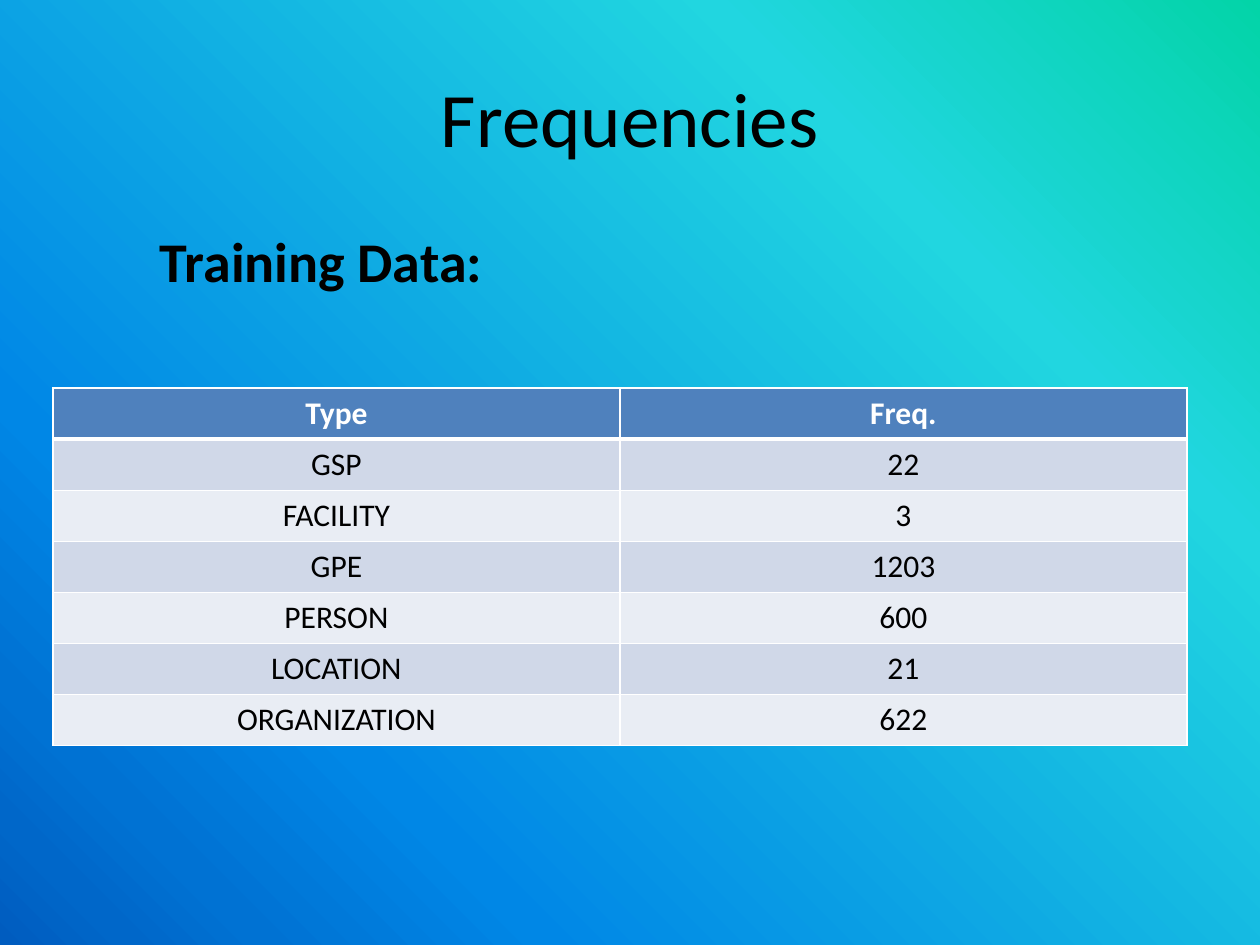
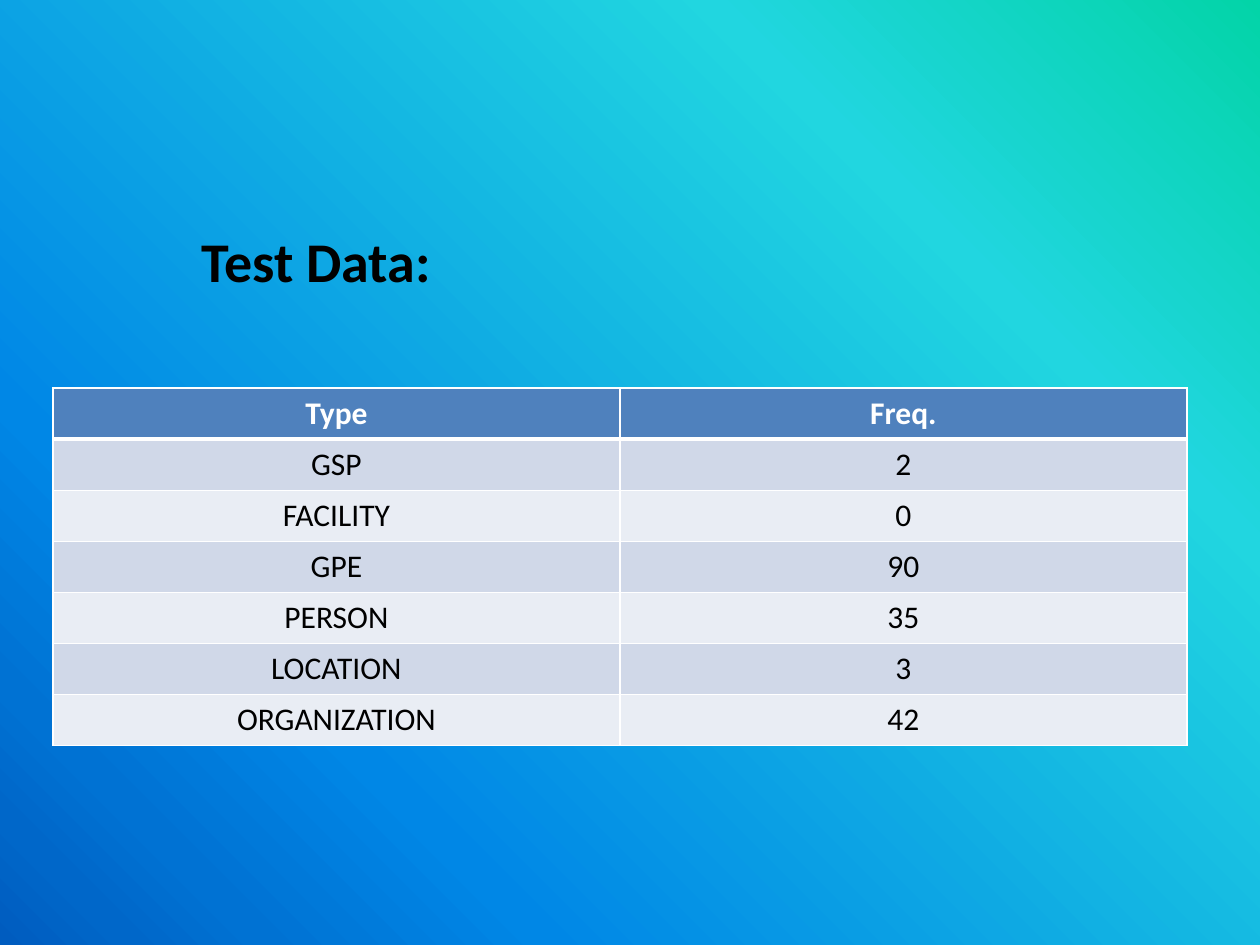
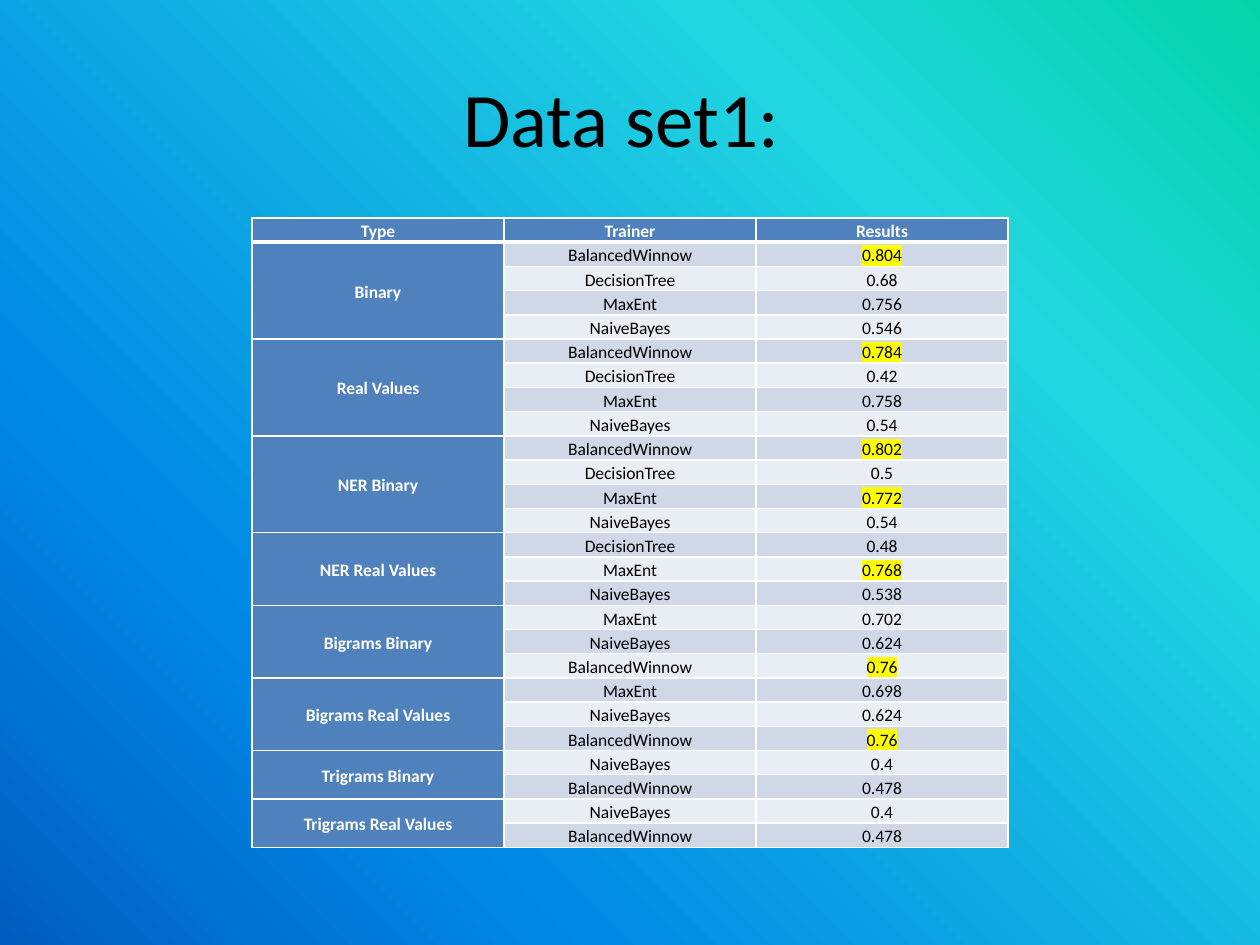
from pptx import Presentation
from pptx.dml.color import RGBColor
from pptx.enum.text import MSO_ANCHOR, MSO_AUTO_SIZE, PP_ALIGN
from pptx.oxml.ns import qn
from pptx.util import Inches, Pt
from lxml import etree

CENTER = PP_ALIGN.CENTER
LEFT = PP_ALIGN.LEFT
TOP = MSO_ANCHOR.TOP
MIDDLE = MSO_ANCHOR.MIDDLE
FIT_SHAPE = MSO_AUTO_SIZE.SHAPE_TO_FIT_TEXT

FONT = "Calibri"
BLACK = RGBColor(0x00, 0x00, 0x00)
WHITE = RGBColor(0xFF, 0xFF, 0xFF)
YELLOW = RGBColor(0xFF, 0xFF, 0x00)
HEADER_BLUE = RGBColor(0x4F, 0x81, 0xBD)
BAND_DARK = RGBColor(0xD0, 0xD8, 0xE8)
BAND_LIGHT = RGBColor(0xE9, 0xED, 0xF4)
BACKGROUND_STOPS = [
    (0, RGBColor(0x03, 0xD4, 0xA8)),
    (25, RGBColor(0x21, 0xD6, 0xE0)),
    (75, RGBColor(0x00, 0x87, 0xE6)),
    (88, RGBColor(0x00, 0x72, 0xD3)),
    (94, RGBColor(0x00, 0x67, 0xC9)),
    (100, RGBColor(0x00, 0x5C, 0xBF)),
]

ENTITY_TYPES = ["GSP", "FACILITY", "GPE", "PERSON", "LOCATION", "ORGANIZATION"]
TRAINING_COUNTS = [22, 3, 1203, 600, 21, 622]
TEST_COUNTS = [2, 0, 90, 35, 3, 42]

WINNOW, TREE, MAXENT, BAYES = "BalancedWinnow", "DecisionTree", "MaxEnt", "NaiveBayes"
ALL_TRAINERS = [WINNOW, TREE, MAXENT, BAYES]
BIGRAM_TRAINERS = [MAXENT, BAYES, WINNOW]
TRIGRAM_TRAINERS = [BAYES, WINNOW]
RESULTS = [
    ("Binary", ALL_TRAINERS, [0.804, 0.68, 0.756, 0.546]),
    ("Real Values", ALL_TRAINERS, [0.784, 0.42, 0.758, 0.54]),
    ("NER Binary", ALL_TRAINERS, [0.802, 0.5, 0.772, 0.54]),
    ("NER Real Values", [TREE, MAXENT, BAYES], [0.48, 0.768, 0.538]),
    ("Bigrams Binary", BIGRAM_TRAINERS, [0.702, 0.624, 0.76]),
    ("Bigrams Real Values", BIGRAM_TRAINERS, [0.698, 0.624, 0.76]),
    ("Trigrams Binary", TRIGRAM_TRAINERS, [0.4, 0.478]),
    ("Trigrams Real Values", TRIGRAM_TRAINERS, [0.4, 0.478]),
]
HIGHLIGHT_FROM = 0.76


def add_color(parent, color):
    etree.SubElement(parent, qn("a:srgbClr"), val=str(color))


class Deck:
    def __init__(self):
        self.presentation = Presentation()
        self.presentation.slide_width = Inches(10)
        self.presentation.slide_height = Inches(7.5)
        self.slide = None

    def new_slide(self):
        self.slide = self.presentation.slides.add_slide(self.presentation.slide_layouts[6])
        fill = self.slide.background.fill
        fill.gradient()
        fill.gradient_angle = 225
        stops = self.slide.element.find(".//" + qn("a:gsLst"))
        for stop in list(stops):
            stops.remove(stop)
        for percent, color in BACKGROUND_STOPS:
            add_color(etree.SubElement(stops, qn("a:gs"), pos=str(percent * 1000)), color)

    def run(self, paragraph, text, size, color=BLACK, bold=False, highlight=None):
        run = paragraph.add_run()
        run.text = text
        run.font.size = Pt(size)
        run.font.bold = bold
        run.font.color.rgb = color
        if highlight is not None:
            # The schema wants the highlight between the fill and the font name.
            add_color(etree.SubElement(run.font._element, qn("a:highlight")), highlight)
        run.font.name = FONT

    def text(self, text, left, top, width, height, size, bold=False,
             align=LEFT, anchor=TOP, indent=0):
        box = self.slide.shapes.add_textbox(
            Inches(left), Inches(top), Inches(width), Inches(height))
        frame = box.text_frame
        frame.word_wrap = True
        frame.vertical_anchor = anchor
        paragraph = frame.paragraphs[0]
        paragraph.alignment = align
        if indent:
            paragraph._p.get_or_add_pPr().set("marL", str(Inches(indent)))
        self.run(paragraph, text, size, bold=bold)
        return box

    def title(self, text):
        self.text(text, 0.5, 0.3, 9, 1.25, 44, align=CENTER, anchor=MIDDLE)

    def subtitle(self, text, left, width, indent=0):
        box = self.text(text, left, 1.75, width, 0.64, 32, bold=True, indent=indent)
        box.text_frame.auto_size = FIT_SHAPE

    def table(self, rows, left, top, width, height):
        shape = self.slide.shapes.add_table(
            len(rows), len(rows[0]), Inches(left), Inches(top), Inches(width), Inches(height))
        return shape.table

    def cell(self, cell, text, row, size, heading=False, highlight=None, compact=False):
        """Fill one cell; row picks the band, and compact tightens it for long tables."""
        self.borders(cell, row)
        cell.fill.solid()
        band = BAND_DARK if row % 2 else BAND_LIGHT
        cell.fill.fore_color.rgb = HEADER_BLUE if heading else band
        paragraph = cell.text_frame.paragraphs[0]
        paragraph.alignment = CENTER
        if compact:
            cell.vertical_anchor = MIDDLE
            cell.margin_left = cell.margin_right = Inches(0.07)
            cell.margin_top = cell.margin_bottom = 0
            paragraph.line_spacing = 1.15
        if text:
            self.run(paragraph, text, size, WHITE if heading else BLACK, heading, highlight)

    def borders(self, cell, row):
        """Thin white borders, with a thick rule between the header and row 1."""
        properties = cell._tc.get_or_add_tcPr()
        widths = {"L": 1, "R": 1, "T": 3 if row == 1 else 1, "B": 3 if row == 0 else 1}
        for side, width in widths.items():
            line = etree.SubElement(properties, qn(f"a:ln{side}"), w=str(Pt(width)))
            add_color(etree.SubElement(line, qn("a:solidFill")), WHITE)

    def frequency_table(self, counts):
        rows = [("Type", "Freq.")] + list(zip(ENTITY_TYPES, counts))
        table = self.table(rows, 0.42, 3.08, 9, 2.84)
        for row, values in enumerate(rows):
            for column, value in enumerate(values):
                self.cell(table.cell(row, column), str(value), row, 18, heading=row == 0)

    def results_table(self):
        rows = [("Type", "Trainer", "Results")]
        spans = []
        for kind, trainers, scores in RESULTS:
            spans.append((len(rows), len(rows) + len(scores) - 1))
            for position, (trainer, score) in enumerate(zip(trainers, scores)):
                rows.append(("" if position else kind, trainer, score))
        table = self.table(rows, 2, 1.73, 6, 4.98)
        for row, values in enumerate(rows):
            for column, value in enumerate(values):
                best = isinstance(value, float) and value >= HIGHLIGHT_FROM
                self.cell(table.cell(row, column), str(value), row, 10,
                          heading=row == 0 or column == 0,
                          highlight=YELLOW if best else None, compact=True)
        for first, last in spans:
            table.cell(first, 0).merge(table.cell(last, 0))


def main():
    deck = Deck()

    deck.new_slide()
    deck.title("Frequencies")
    deck.frequency_table(TRAINING_COUNTS)
    deck.subtitle("Training Data:", 1.17, 7.25)

    deck.new_slide()
    deck.subtitle("Test Data:", 0.5, 9, indent=1)
    deck.frequency_table(TEST_COUNTS)

    deck.new_slide()
    deck.title("Data set1: ")
    deck.results_table()

    deck.presentation.save("out.pptx")


if __name__ == "__main__":
    main()
